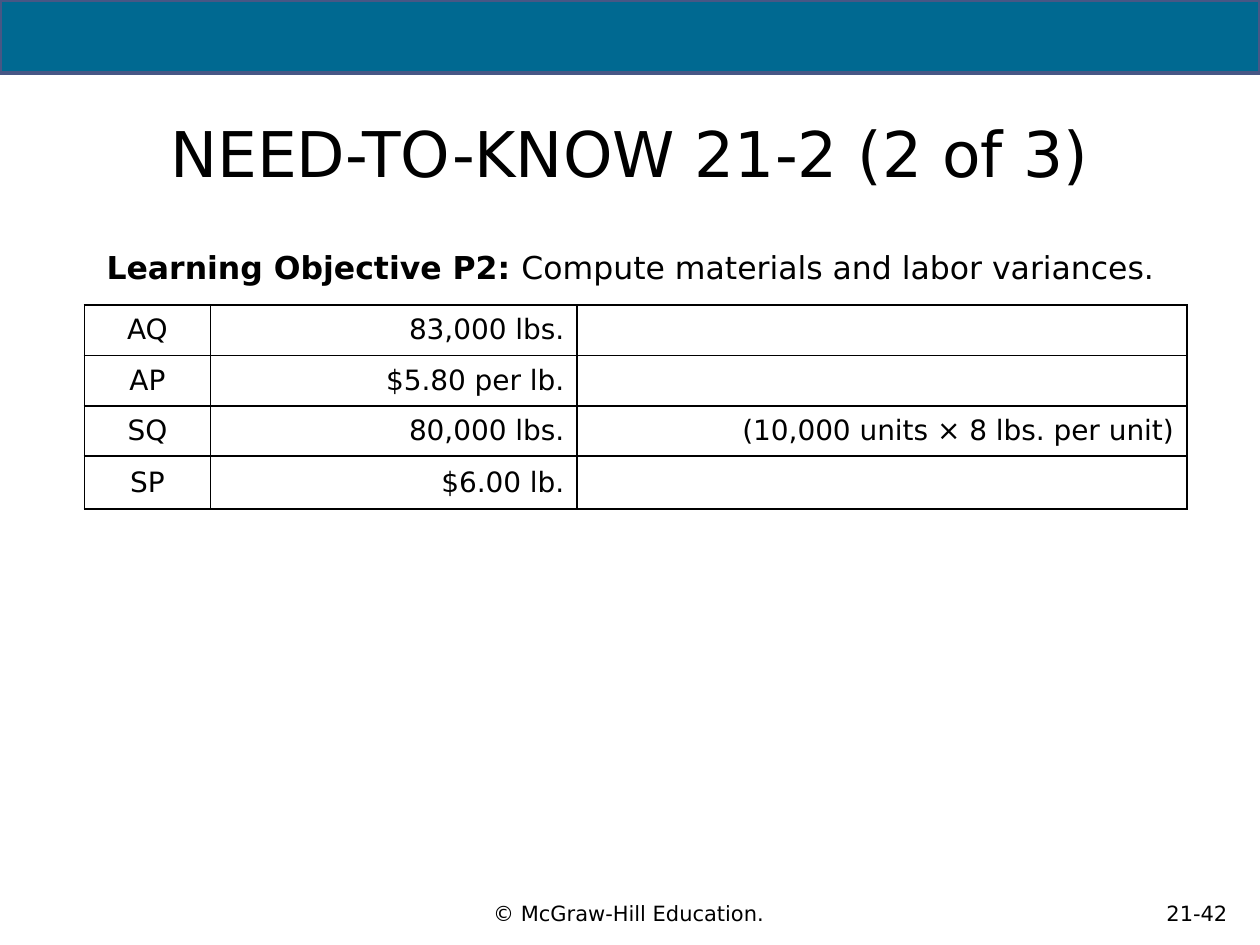
from lxml.etree import SubElement
from pptx import Presentation
from pptx.dml.color import RGBColor
from pptx.enum.shapes import MSO_SHAPE
from pptx.enum.text import MSO_ANCHOR, PP_ALIGN
from pptx.oxml.ns import qn
from pptx.util import Inches, Pt

BLACK = RGBColor(0x00, 0x00, 0x00)
TEAL = RGBColor(0x00, 0x69, 0x91)
SLATE = RGBColor(0x47, 0x57, 0x85)

VARIANCE_INPUTS = [
    ("AQ", "83,000 lbs.", ""),
    ("AP", "$5.80 per lb.", ""),
    ("SQ", "80,000 lbs.", "(10,000 units × 8 lbs. per unit)"),
    ("SP", "$6.00 lb.", ""),
]
COLUMN_WIDTHS = [1, 2.91, 4.84]
ROW_HEIGHTS = [0.4, 0.4, 0.4, 0.42]
COLUMN_ALIGNS = [PP_ALIGN.CENTER, PP_ALIGN.RIGHT, PP_ALIGN.RIGHT]


class SlideBuilder:
    font_name = "DejaVu Sans"

    def __init__(self, slide):
        self.slide = slide

    def add_runs(self, frame, runs, size, align=PP_ALIGN.CENTER):
        paragraph = frame.paragraphs[0]
        paragraph.alignment = align
        for wording, bold in runs:
            run = paragraph.add_run()
            run.text = wording
            run.font.name = self.font_name
            run.font.size = Pt(size)
            run.font.bold = bold
            run.font.color.rgb = BLACK

    def title(self, wording, left, top, width, height):
        heading = self.slide.shapes.title
        heading.left, heading.top = Inches(left), Inches(top)
        heading.width, heading.height = Inches(width), Inches(height)
        heading.text_frame.vertical_anchor = MSO_ANCHOR.MIDDLE
        self.add_runs(heading.text_frame, [(wording, False)], 36)

    def band(self, left, top, width, height):
        band = self.slide.shapes.add_shape(
            MSO_SHAPE.RECTANGLE, Inches(left), Inches(top), Inches(width), Inches(height))
        band.shadow.inherit = False
        band.fill.solid()
        band.fill.fore_color.rgb = TEAL
        band.line.color.rgb = SLATE
        band.line.width = Pt(2.25)

    def text(self, runs, left, top, width, height, size, anchor=MSO_ANCHOR.MIDDLE):
        frame = self.slide.shapes.add_textbox(
            Inches(left), Inches(top), Inches(width), Inches(height)).text_frame
        frame.word_wrap = True
        frame.vertical_anchor = anchor
        self.add_runs(frame, runs, size)

    def border(self, cell):
        properties = cell._tc.get_or_add_tcPr()
        for position, side in enumerate(("a:lnL", "a:lnR", "a:lnT", "a:lnB")):
            edge = properties.makeelement(qn(side), {"w": str(Pt(1))})
            fill = SubElement(edge, qn("a:solidFill"))
            SubElement(fill, qn("a:srgbClr"), val=str(BLACK))
            properties.insert(position, edge)

    def table(self, rows, left, top, widths, heights, aligns, size):
        table = self.slide.shapes.add_table(
            len(rows), len(widths), Inches(left), Inches(top),
            Inches(sum(widths)), Inches(sum(heights))).table
        table.first_row = False
        table.horz_banding = False
        for column, width in zip(table.columns, widths):
            column.width = Inches(width)
        for row, height, wordings in zip(table.rows, heights, rows):
            row.height = Inches(height)
            for cell, wording, align in zip(row.cells, wordings, aligns):
                cell.fill.background()
                cell.vertical_anchor = MSO_ANCHOR.MIDDLE
                self.border(cell)
                if wording:
                    self.add_runs(cell.text_frame, [(wording, False)], size, align)


def main():
    deck = Presentation()
    deck.slide_width, deck.slide_height = Inches(10), Inches(7.5)
    builder = SlideBuilder(deck.slides.add_slide(deck.slide_layouts[5]))
    builder.band(0, 0, 10, 0.58)
    builder.title("NEED-TO-KNOW 21-2 (2 of 3)", 0.33, 0.6, 9.33, 1.22)
    builder.text(
        [("Learning Objective P2: ", True), ("Compute materials and labor variances.", False)],
        0.1, 1.92, 9.81, 0.42, 18, MSO_ANCHOR.TOP)
    builder.table(VARIANCE_INPUTS, 0.67, 2.42, COLUMN_WIDTHS, ROW_HEIGHTS, COLUMN_ALIGNS, 16)
    builder.text([("© McGraw-Hill Education.", False)], 0.94, 7, 8.1, 0.5, 12)
    builder.text([("21-42", False)], 9, 7, 1, 0.5, 12)
    deck.save("out.pptx")


if __name__ == "__main__":
    main()
